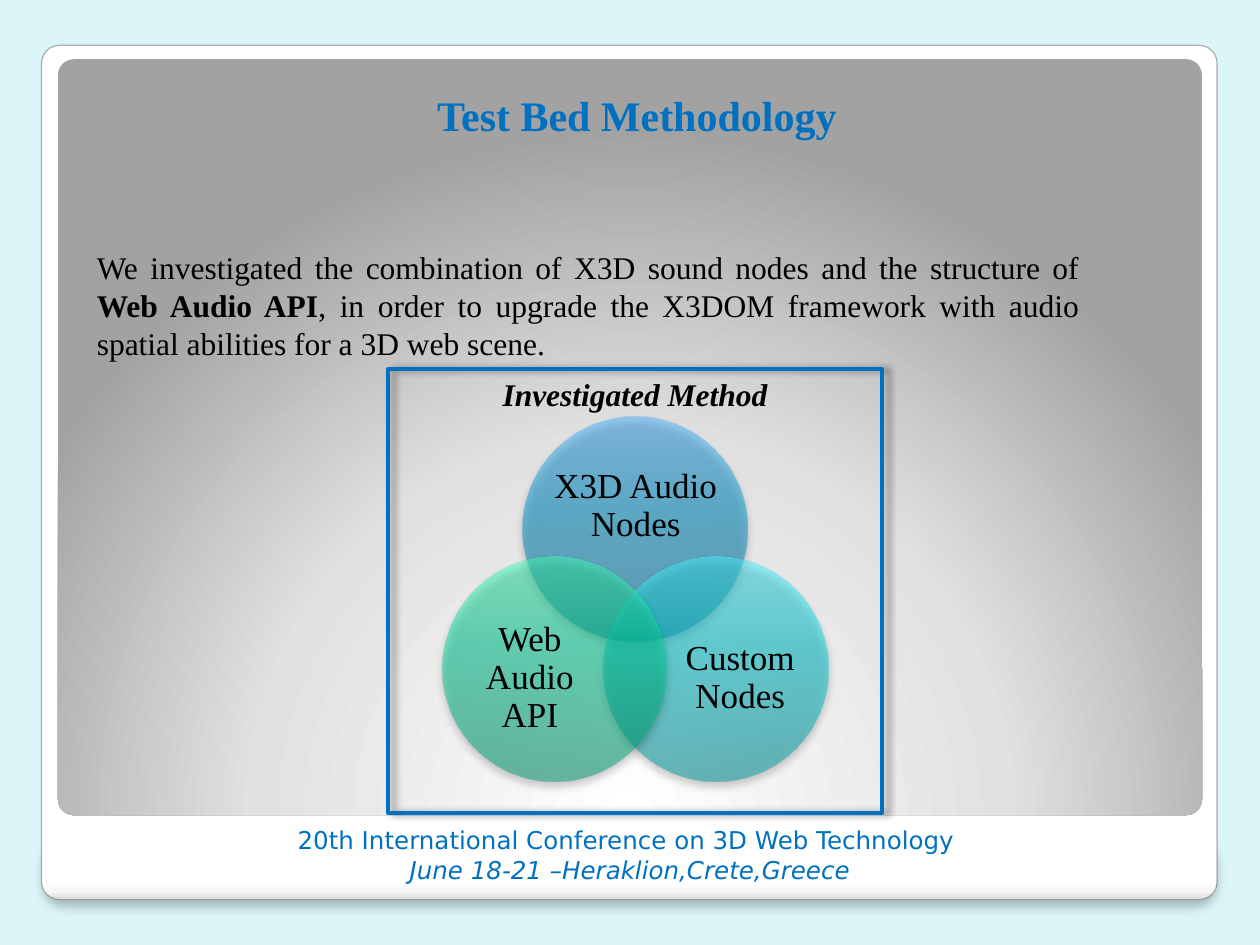
from dataclasses import dataclass
from math import cos, radians, sin

from lxml import etree
from pptx import Presentation
from pptx.dml.color import RGBColor
from pptx.enum.shapes import MSO_SHAPE
from pptx.enum.text import MSO_ANCHOR, MSO_AUTO_SIZE, PP_ALIGN
from pptx.oxml import parse_xml
from pptx.oxml.ns import nsdecls, qn
from pptx.util import Inches, Pt


@dataclass(frozen=True)
class Theme:
    background: str = "DBF5F9"
    accent: str = "0070C0"
    text: str = "000000"
    edge: str = "302F2C"
    serif: str = "Times New Roman"
    sans: str = "DejaVu Sans"
    title_size: int = 24
    circle_size: int = 20
    body_size: int = 18
    footer_size: int = 14
    card: tuple = ((0, "FFFFFF"), (98, "FFFFFF"), (99, "F7F7F7"), (100, "DADADA"))
    panel: tuple = ((0, "FFFFFF"), (55, "E1E1E1"), (100, "A2A2A2"))
    blue: tuple = ((0, "006F99"), (60, "009AD4"), (100, "48B4FF"))
    cyan: tuple = ((0, "009AA1"), (60, "00D5DF"), (100, "49F3FF"))
    green: tuple = ((0, "009E73"), (60, "00DA9F"), (100, "41FFB6"))


theme = Theme()


def write_text(shape, lines, size, font=theme.serif, color=theme.text,
               align=PP_ALIGN.CENTER, anchor=MSO_ANCHOR.TOP, margin=None,
               spacing=None, wrap=True):
    """Fill a shape with lines of (text, bold, italic) runs."""
    frame = shape.text_frame
    frame.word_wrap = wrap
    frame.auto_size = MSO_AUTO_SIZE.NONE
    frame.vertical_anchor = anchor
    if margin is not None:
        frame.margin_left = frame.margin_right = Inches(margin)
        frame.margin_top = frame.margin_bottom = Inches(margin)
    paragraph = frame.paragraphs[0]
    paragraph.alignment = align
    if spacing:
        paragraph.line_spacing = spacing
    for index, line in enumerate(lines):
        if index:
            paragraph.add_line_break()
        for text, bold, italic in line:
            run = paragraph.add_run()
            run.text = text
            run.font.name = font
            run.font.size = Pt(size)
            run.font.bold = bold
            run.font.italic = italic
            run.font.color.rgb = RGBColor.from_string(color)


def add_styled_shape(kind, box, stops=None, angle=90, alpha=100, radial=False,
                     line=None, line_alpha=100, shadow=None, corner=None):
    """Add a shape; shadow is (opacity, blur, distance, direction)."""
    shape = slide.shapes.add_shape(kind, *map(Inches, box))
    shape.shadow.inherit = False
    if corner is not None:
        shape.adjustments[0] = corner
    shape.fill.background()
    if line:
        color, width = line
        shape.line.color.rgb = RGBColor.from_string(color)
        shape.line.width = Pt(width)
        line_color = shape.line._get_or_add_ln().find(".//" + qn("a:srgbClr"))
        etree.SubElement(line_color, qn("a:alpha"), val=str(line_alpha * 1000))
    else:
        shape.line.fill.background()
    properties = shape._element.spPr
    if stops:
        stop_xml = "".join(
            f'<a:gs pos="{position * 1000}"><a:srgbClr val="{color}">'
            f'<a:alpha val="{alpha * 1000}"/></a:srgbClr></a:gs>'
            for position, color in stops)
        direction = (
            '<a:path path="circle"><a:fillToRect l="100000" t="350000" '
            'r="100000" b="100000"/></a:path>' if radial
            else f'<a:lin ang="{angle * 60000}" scaled="0"/>')
        gradient = parse_xml(f'<a:gradFill {nsdecls("a")} rotWithShape="1">'
                             f'<a:gsLst>{stop_xml}</a:gsLst>{direction}</a:gradFill>')
        properties.replace(properties.find(qn("a:noFill")), gradient)
    if shadow:
        opacity, blur, distance, direction = shadow
        effects = properties.find(qn("a:effectLst"))
        effects.append(parse_xml(
            f'<a:outerShdw {nsdecls("a")} blurRad="{Pt(blur)}" dist="{Pt(distance)}" '
            f'dir="{direction * 60000}" rotWithShape="0"><a:srgbClr val="000000">'
            f'<a:alpha val="{opacity * 1000}"/></a:srgbClr></a:outerShdw>'))
    return shape


presentation = Presentation()
presentation.slide_width = Inches(10)
presentation.slide_height = Inches(7.5)
slide = presentation.slides.add_slide(presentation.slide_layouts[5])
slide.background.fill.solid()
slide.background.fill.fore_color.rgb = RGBColor.from_string(theme.background)

# Card with its shadow, and the grey panel
card_line = {"line": (theme.edge, 0.67), "line_alpha": 37}
add_styled_shape(MSO_SHAPE.ROUNDED_RECTANGLE, (0.35, 6.63, 9.3, 0.5), theme.card,
                 corner=0.333, shadow=(25, 6, 4, 90), **card_line)
add_styled_shape(MSO_SHAPE.ROUNDED_RECTANGLE, (0.33, 0.36, 9.33, 6.78), theme.card,
                 corner=0.021, **card_line)
add_styled_shape(MSO_SHAPE.ROUNDED_RECTANGLE, (0.46, 0.47, 9.08, 6), theme.panel,
                 radial=True, corner=0.021)

# Title, brought in front of the panel
title = slide.shapes.title
title.left, title.top, title.width, title.height = map(Inches, (0.58, 0.58, 8.95, 0.58))
slide.shapes._spTree.append(title._element)
write_text(title, [[("Test Bed Methodology", True, False)]], theme.title_size,
           color=theme.accent, anchor=MSO_ANCHOR.BOTTOM)

# Introduction
introduction = slide.shapes.add_textbox(*map(Inches, (0.67, 1.92, 8, 1.01)))
write_text(introduction, [[
    ("We investigated the combination of X3D sound nodes and the structure of ", False, False),
    ("Web Audio API", True, False),
    (", in order to upgrade the X3DOM framework with audio spatial abilities "
     "for a 3D web scene.", False, False),
]], theme.body_size, align=PP_ALIGN.JUSTIFY)

# Venn diagram: three circles around one centre
center_x, center_y, orbit, diameter = 5.04, 4.94, 0.74, 1.78
circles = [
    ("X3D Audio Nodes", -90, theme.blue, (4.39, 3.62, 1.31, 0.8)),
    ("Custom Nodes", 30, theme.cyan, (5.34, 4.89, 1.07, 0.98)),
    ("Web Audio API", 150, theme.green, (3.67, 4.89, 1.07, 0.98)),
]
for text, bearing, stops, label_box in circles:
    left = center_x + orbit * cos(radians(bearing)) - diameter / 2
    top = center_y + orbit * sin(radians(bearing)) - diameter / 2
    add_styled_shape(MSO_SHAPE.OVAL, (left, top, diameter, diameter), stops,
                     angle=270, alpha=50, shadow=(40, 5.2, 3, 90))
    label = slide.shapes.add_textbox(*map(Inches, label_box))
    write_text(label, [[(text, False, False)]], theme.circle_size,
               anchor=MSO_ANCHOR.MIDDLE, margin=0, spacing=0.9)

# Frame and heading of the diagram
add_styled_shape(MSO_SHAPE.RECTANGLE, (3.08, 2.93, 3.92, 3.52),
                 line=(theme.accent, 2.25), shadow=(40, 4, 3, 0))
heading = slide.shapes.add_textbox(*map(Inches, (3.89, 2.93, 2.33, 0.4)))
write_text(heading, [[("Investigated Method", True, True)]], theme.body_size,
           align=PP_ALIGN.LEFT, wrap=False)

# Conference footer
footer = slide.shapes.add_textbox(*map(Inches, (0.5, 6.5, 9, 0.57)))
write_text(footer, [
    [("20th International Conference on 3D Web Technology ", False, False)],
    [("June 18-21 –Heraklion,Crete,Greece", False, True)],
], theme.footer_size, font=theme.sans, color=theme.accent)

presentation.save("out.pptx")
